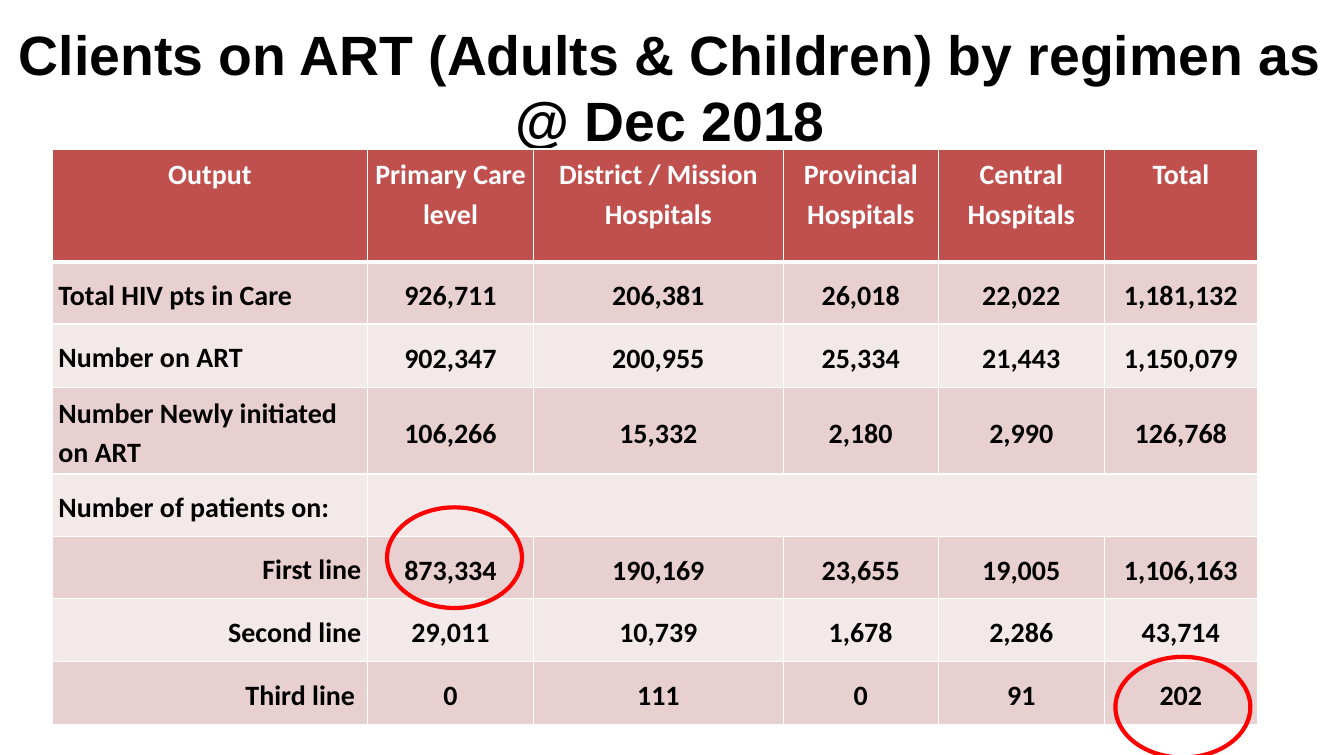
from lxml import etree
from pptx import Presentation, util as u
from pptx.dml.color import RGBColor
from pptx.enum import shapes, text
from pptx.oxml import ns

WHITE = RGBColor(0xFF, 0xFF, 0xFF)
BLACK = RGBColor(0, 0, 0)
RED = RGBColor(0xFF, 0, 0)
HEADER_FILL = RGBColor(0xC0, 0x50, 0x4D)
BAND_FILLS = (RGBColor(0xF4, 0xE9, 0xE9), RGBColor(0xE8, 0xD0, 0xD0))

LEFT, CENTER, RIGHT = text.PP_ALIGN.LEFT, text.PP_ALIGN.CENTER, text.PP_ALIGN.RIGHT
TOP, MIDDLE = text.MSO_ANCHOR.TOP, text.MSO_ANCHOR.MIDDLE

TITLE = "Clients on ART (Adults & Children) by regimen as @ Dec 2018"
HEADER = ("Output", "Primary Care level", "District / Mission Hospitals",
          "Provincial Hospitals", "Central Hospitals", "Total")
ROWS = (
    ("Total HIV pts in Care", "926,711", "206,381", "26,018", "22,022", "1,181,132"),
    ("Number on ART", "902,347", "200,955", "25,334", "21,443", "1,150,079"),
    ("Number Newly initiated on ART", "106,266", "15,332", "2,180", "2,990", "126,768"),
    ("Number of patients on:",),
    ("First line", "873,334", "190,169", "23,655", "19,005", "1,106,163"),
    ("Second line", "29,011", "10,739", "1,678", "2,286", "43,714"),
    ("Third line ", "0", "111", "0", "91", "202"),
)
GROUP_ROW = 4
COLUMN_WIDTHS = (3.13, 1.65, 2.48, 1.54, 1.65, 1.52)
ROW_HEIGHTS = (1.12, 0.62, 0.63, 0.86, 0.62, 0.62, 0.62, 0.63)
# Row, column, and the ring's shift from the middle of that cell
RINGS = ((5, 1, 0.04, -0.1), (7, 5, 0.02, 0.14))
RING_SIZE = (1.34, 1)


def apply(target, **values):
    for name, value in values.items():
        setattr(target, name, value)


def write(para, words, font, size, color, align, spacing=None):
    apply(para, alignment=align, line_spacing=spacing)
    span = para.add_run()
    span.text = words
    apply(span.font, name=font, size=u.Pt(size), bold=True)
    span.font.color.rgb = color


def set_borders(cell, bottom):
    """Put white lines on all four sides; bottom is a width in points."""
    properties = cell._tc.get_or_add_tcPr()
    for place, (side, width) in enumerate((("L", 1), ("R", 1), ("T", 1), ("B", bottom))):
        line = etree.Element(ns.qn(f"a:ln{side}"), w=str(u.Pt(width)))
        fill = etree.SubElement(line, ns.qn("a:solidFill"))
        etree.SubElement(fill, ns.qn("a:srgbClr"), val=str(WHITE))
        properties.insert(place, line)


def add_title(page, left, top, width, height):
    box = page.shapes.add_textbox(*map(u.Inches, (left, top, width, height)))
    apply(box.text_frame, word_wrap=True, vertical_anchor=MIDDLE)
    write(box.text_frame.paragraphs[0], TITLE, "Arial", 39.6, BLACK, CENTER)


def format_cell(cell, row, column):
    is_header = row == 0
    cell.fill.solid()
    cell.fill.fore_color.rgb = HEADER_FILL if is_header else BAND_FILLS[row % 2]
    set_borders(cell, 3 if is_header else 1)
    side, edge, base = (0.06, 0.04, 0.04) if is_header or column == 0 else (0.01, 0.01, 0)
    apply(cell, vertical_anchor=TOP if is_header else MIDDLE,
          margin_left=u.Inches(side), margin_right=u.Inches(side),
          margin_top=u.Inches(edge), margin_bottom=u.Inches(base))


def add_regimen_table(page, left, top):
    frame = page.shapes.add_table(
        len(ROW_HEIGHTS), len(COLUMN_WIDTHS), u.Inches(left), u.Inches(top),
        u.Inches(sum(COLUMN_WIDTHS)), u.Inches(sum(ROW_HEIGHTS)))
    table = frame.table
    for column, width in zip(table.columns, COLUMN_WIDTHS):
        column.width = u.Inches(width)
    for row, height in zip(table.rows, ROW_HEIGHTS):
        row.height = u.Inches(height)
    for row, entries in enumerate((HEADER, *ROWS)):
        for column in range(len(HEADER)):
            format_cell(table.cell(row, column), row, column)
        for column, words in enumerate(entries):
            align = CENTER
            if row and column == 0:
                align = RIGHT if row > GROUP_ROW else LEFT
            para = table.cell(row, column).text_frame.paragraphs[0]
            write(para, words, "Calibri", 20, BLACK if row else WHITE, align, 1.15)
    table.cell(GROUP_ROW, 1).merge(table.cell(GROUP_ROW, len(HEADER) - 1))


def add_rings(page, left, top):
    """Circle the key figures of the table whose corner is given."""
    width, height = RING_SIZE
    for row, column, shift_x, shift_y in RINGS:
        x = left + sum(COLUMN_WIDTHS[:column]) + COLUMN_WIDTHS[column] / 2 + shift_x
        y = top + sum(ROW_HEIGHTS[:row]) + ROW_HEIGHTS[row] / 2 + shift_y
        ring = page.shapes.add_shape(
            shapes.MSO_SHAPE.OVAL,
            *map(u.Inches, (x - width / 2, y - height / 2, width, height)))
        ring.shadow.inherit = False
        ring.fill.background()
        ring.line.color.rgb = RED
        ring.line.width = u.Pt(3)


def main():
    deck = Presentation()
    apply(deck, slide_width=u.Inches(13.35), slide_height=u.Inches(7.5))
    page = deck.slides.add_slide(deck.slide_layouts[6])
    table_corner = (0.52, 1.48)
    add_title(page, -0.02, 0.23, 13.35, 1.25)
    add_regimen_table(page, *table_corner)
    add_rings(page, *table_corner)
    deck.save("out.pptx")


if __name__ == "__main__":
    main()
